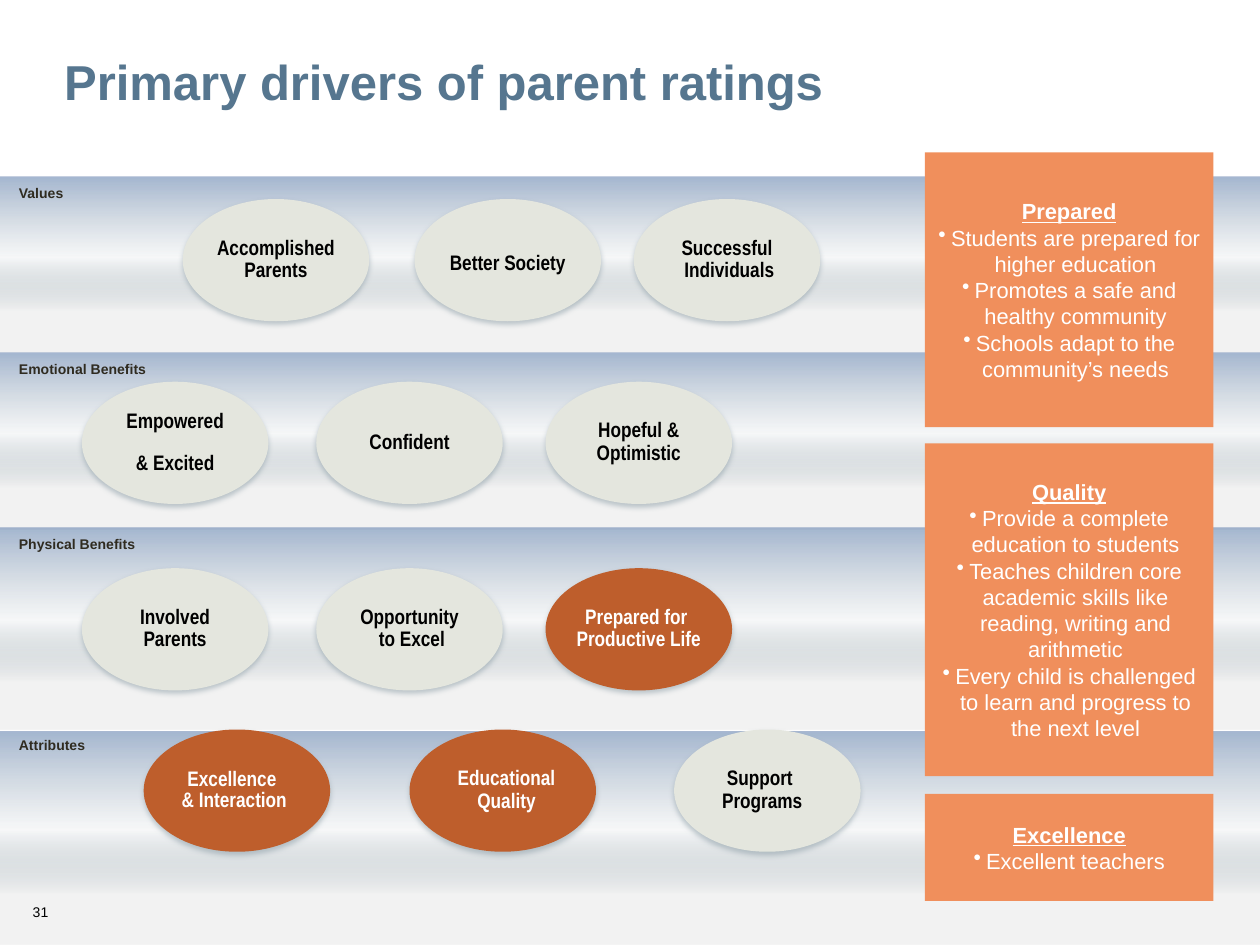
from pptx import Presentation
from pptx.dml.color import RGBColor
from pptx.enum.shapes import MSO_SHAPE as Shape
from pptx.enum.text import MSO_ANCHOR as Anchor, PP_ALIGN as Align
from pptx.oxml import parse_xml
from pptx.util import Inches, Pt

COLORS = {
    "title": "56768F", "band_label": "2F2B20", "dark": "000000", "light": "FFFFFF",
    "plain": "E4E6DE", "driver": "BE5E2C", "panel": "F08F5C", "shadow": "8E9FA8",
}
BAND_STOPS = [(0, "6684B0", 59), (46, "8E9FA8", 7), (76, "F2F2F2", 100)]
NAMESPACE = 'xmlns:a="http://schemas.openxmlformats.org/drawingml/2006/main"'
COLUMNS, ROWS = 100, 75
OVAL_WIDTH, OVAL_HEIGHT = 14.8, 9.7


def color_xml(color, alpha):
    return f'<a:srgbClr val="{color}"><a:alpha val="{alpha * 1000}"/></a:srgbClr>'


def write(frame, texts, size, color, font="Arial", bold=False, align=Align.LEFT,
          spacing=None, gap=0, anchor=Anchor.TOP, inset=0, wrap=True, bulleted=False):
    """Fill a frame; in a bulleted one the first text is an underlined heading."""
    frame.word_wrap, frame.vertical_anchor = wrap, anchor
    frame.margin_left = frame.margin_right = Inches(inset)
    frame.margin_top = frame.margin_bottom = Inches(inset)
    for index, text in enumerate(texts):
        paragraph = frame.paragraphs[0] if index == 0 else frame.add_paragraph()
        paragraph.text = text
        paragraph.alignment = align
        if bulleted and index:
            properties = paragraph._p.get_or_add_pPr()
            properties.set("marL", str(Inches(0.1)))
            properties.set("indent", str(Inches(-0.1)))
            properties.append(parse_xml(f'<a:buChar {NAMESPACE} char="•"/>'))
        if spacing:
            paragraph.line_spacing = Pt(spacing)
        if index and gap:
            paragraph.space_before = Pt(gap)
        for run in paragraph.runs:
            run.font.name, run.font.size = font, Pt(size)
            run.font.bold = bold or (bulleted and index == 0)
            run.font.underline = bulleted and index == 0
            run.font.color.rgb = RGBColor.from_string(COLORS[color])


class DriverSlide:
    def __init__(self, presentation):
        self.slide = presentation.slides.add_slide(presentation.slide_layouts[6])
        self.column = presentation.slide_width / COLUMNS
        self.row = presentation.slide_height / ROWS

    def place(self, left, top, width, height):
        return (round(left * self.column), round(top * self.row),
                round(width * self.column), round(height * self.row))

    def shape(self, kind, box, color=None):
        shape = self.slide.shapes.add_shape(kind, *self.place(*box))
        shape.shadow.inherit = False
        shape.line.fill.background()
        if color:
            shape.fill.solid()
            shape.fill.fore_color.rgb = RGBColor.from_string(COLORS[color])
        return shape

    def text(self, box, texts, **style):
        frame = self.slide.shapes.add_textbox(*self.place(*box)).text_frame
        write(frame, texts, **style)

    def band(self, top, height):
        shape = self.shape(Shape.RECTANGLE, (0, top, COLUMNS, height))
        shape.fill.background()
        stops = "".join(f'<a:gs pos="{position * 1000}">{color_xml(color, alpha)}</a:gs>'
                        for position, color, alpha in BAND_STOPS)
        gradient = parse_xml(f'<a:gradFill {NAMESPACE} rotWithShape="1"><a:gsLst>{stops}'
                             '</a:gsLst><a:lin ang="5400000" scaled="0"/></a:gradFill>')
        properties = shape._element.spPr
        properties.replace(properties.find("{*}noFill"), gradient)

    def band_label(self, top, width, text):
        self.text((1.5, top, width, 1.3), [text], size=8, color="band_label", bold=True,
                  spacing=9, wrap=False)

    def oval(self, left, top, is_driver):
        shape = self.shape(Shape.OVAL, (left, top, OVAL_WIDTH, OVAL_HEIGHT),
                           "driver" if is_driver else "plain")
        shape._element.spPr.find("{*}effectLst").append(parse_xml(
            f'<a:outerShdw {NAMESPACE} blurRad="{Pt(3.1)}" dist="{Pt(1.8)}" dir="5400000" '
            f'rotWithShape="0">{color_xml(COLORS["shadow"], 54)}</a:outerShdw>'))

    def oval_label(self, left, top, is_driver, width, texts, shift=(0, 0), gap=1):
        height = 1.7 if len(texts) == 1 and "\n" not in texts[0] else 3.6
        box = (left + (OVAL_WIDTH - width) / 2 + shift[0],
               top + (OVAL_HEIGHT - height) / 2 + shift[1], width, height)
        self.text(box, texts, size=12, color="light" if is_driver else "dark",
                  font="Arial Narrow", bold=True, align=Align.CENTER, spacing=12,
                  gap=gap, anchor=Anchor.MIDDLE, wrap=False)

    def panel(self, top, height, texts):
        shape = self.shape(Shape.RECTANGLE, (73.4, top, 22.9, height), "panel")
        write(shape.text_frame, texts, size=12.5, color="light", align=Align.CENTER,
              spacing=15, anchor=Anchor.MIDDLE, inset=0.1, bulleted=True)


# Band: top, height, label top, label width, label
BANDS = [
    (14, 14, 14.7, 3.6, "Values"),
    (28, 14, 28.7, 10.2, "Emotional Benefits"),
    (41.9, 16, 42.6, 9.3, "Physical Benefits"),
    (58.1, 16.9, 58.5, 5.3, "Attributes"),
]
# Oval: left, top, is a driver, label width, label lines, label shift, line gap
OVALS = [
    (14.5, 15.8, False, 9.4, ["Accomplished ", "Parents"]),
    (32.9, 15.8, False, 9.3, ["Better Society"], (0, 0.3)),
    (50.3, 15.8, False, 7.6, ["Successful", " Individuals"]),
    (6.5, 30.3, False, 7.8, ["Empowered ", "& Excited"], (0, 0), 12),
    (25.1, 30.3, False, 6.5, ["Confident"]),
    (43.3, 30.3, False, 6.7, ["Hopeful &", "Optimistic"]),
    (6.5, 45.1, False, 5.6, ["Involved ", "Parents"]),
    (25.1, 45.1, False, 7.9, ["Opportunity", " to Excel"]),
    (43.3, 45.1, True, 10, ["Prepared for ", "Productive Life"]),
    (11.4, 57.9, True, 8.4, ["Excellence \n& Interaction"], (-0.2, 0)),
    (32.5, 57.9, True, 7.8, ["Educational ", "Quality"], (0.3, 0)),
    (53.5, 57.9, False, 6.4, ["Support ", "Programs"], (-0.4, 0)),
]
# Panel: top, height, heading and bullets
PANELS = [
    (12.1, 21.8, ["Prepared", "Students are prepared for higher education",
                  "Promotes a safe and healthy community",
                  "Schools adapt to the community’s needs"]),
    (35.2, 26.4, ["Quality", "Provide a complete education to students",
                  "Teaches children core academic skills like reading, writing and arithmetic",
                  "Every child is challenged to learn and progress to the next level"]),
    (63, 8.5, ["Excellence", "Excellent teachers"]),
]


def main():
    presentation = Presentation()
    presentation.slide_width, presentation.slide_height = Inches(10), Inches(7.5)
    page = DriverSlide(presentation)

    # Bands and their labels
    for top, height, *_ in BANDS:
        page.band(top, height)
    for _, _, *label in BANDS:
        page.band_label(*label)

    # Ovals and their labels
    for oval in OVALS:
        page.oval(*oval[:3])
    for oval in OVALS:
        page.oval_label(*oval)

    # Panels on the right
    for panel in PANELS:
        page.panel(*panel)

    # Title and page number
    page.text((5.1, 0, 62.3, 14), ["Primary drivers of parent ratings"], size=28,
              color="title", bold=True, spacing=25, anchor=Anchor.MIDDLE)
    page.text((2.6, 71.7, 17.5, 1.3), ["31"], size=8, color="dark")

    presentation.save("out.pptx")


if __name__ == "__main__":
    main()
